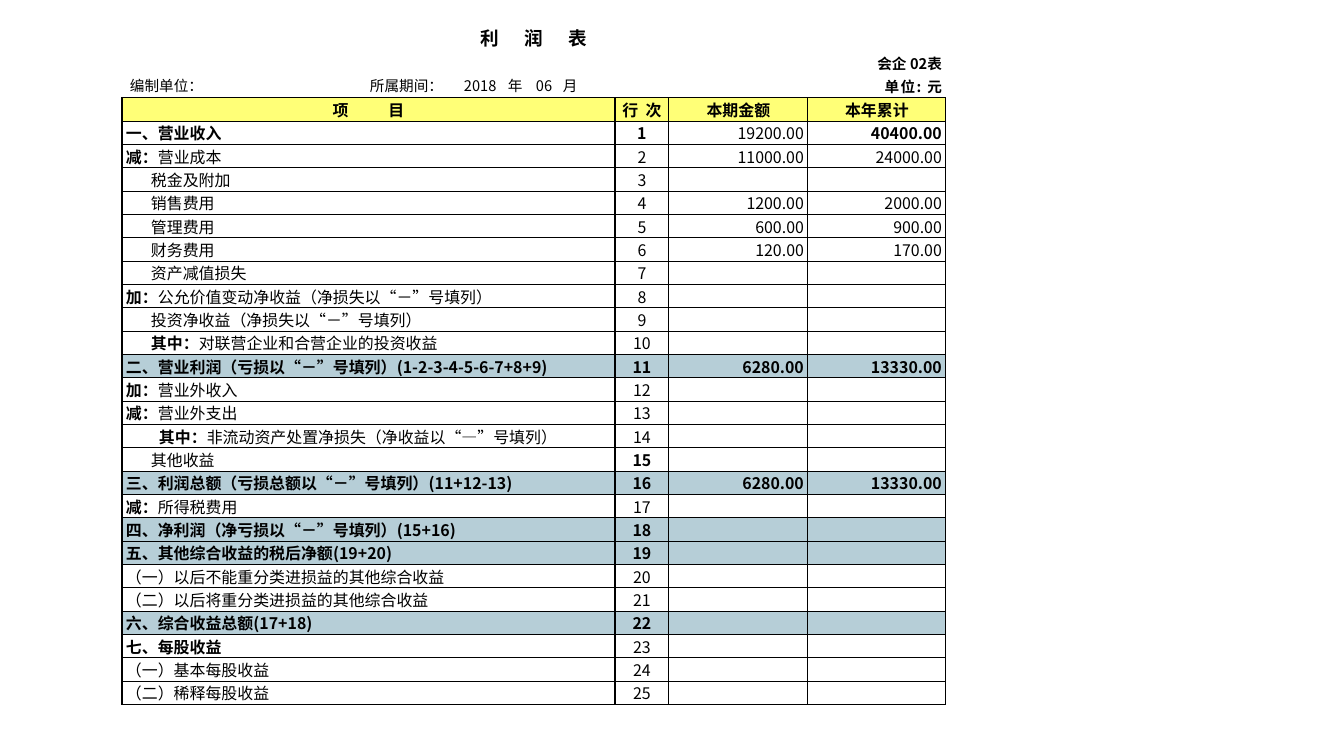
from dataclasses import dataclass

from lxml.etree import SubElement
from pptx import Presentation
from pptx.dml.color import RGBColor
from pptx.enum.text import MSO_ANCHOR as Anchor, PP_ALIGN as Align
from pptx.oxml.ns import qn
from pptx.table import Table, _Cell as Cell
from pptx.util import Emu, Pt

PX = 9565
FONT = "Noto Sans CJK SC"
BLACK = RGBColor(0x00, 0x00, 0x00)
YELLOW = RGBColor(0xFF, 0xFF, 0x77)
BLUE_GREY = RGBColor(0xB6, 0xCE, 0xD7)
NO_STYLE = "{2D5ABB26-0587-4C30-8999-92F81FD0307C}"

LEFT, TOP, HEIGHT = 122, 24, 677
COLUMNS = (413, 80, 54, 139, 138)
HEADING_ROWS = 3
HEADER_ROW = 3
PERIOD_TABS = (240, 334, 378, 406, 433)
INDENT, DEEP_INDENT = 25, 33
ALL_SIDES = ("lnL", "lnR", "lnT", "lnB")


@dataclass(frozen=True)
class Span:
    text: str
    bold: bool = False
    tracking: float = 0


@dataclass(frozen=True)
class Line:
    """One line of the statement: a bold lead, then plain text."""
    lead: str = ""
    text: str = ""
    current: str = ""
    total: str = ""
    indent: int = 0
    shaded: bool = False


LINES = (
    Line("一、营业收入", "", "19200.00", "40400.00"),
    Line("减：", "营业成本", "11000.00", "24000.00"),
    Line("", "税金及附加", indent=INDENT),
    Line("", "销售费用", "1200.00", "2000.00", INDENT),
    Line("", "管理费用", "600.00", "900.00", INDENT),
    Line("", "财务费用", "120.00", "170.00", INDENT),
    Line("", "资产减值损失", indent=INDENT),
    Line("加：", "公允价值变动净收益（净损失以“－”号填列）"),
    Line("", "投资净收益（净损失以“－”号填列）", indent=INDENT),
    Line("其中：", "对联营企业和合营企业的投资收益", indent=INDENT),
    Line("二、营业利润（亏损以“－”号填列）(1-2-3-4-5-6-7+8+9)", "",
         "6280.00", "13330.00", shaded=True),
    Line("加：", "营业外收入"),
    Line("减：", "营业外支出"),
    Line("其中：", "非流动资产处置净损失（净收益以“—”号填列）", indent=DEEP_INDENT),
    Line("", "其他收益", indent=INDENT),
    Line("三、利润总额（亏损总额以“－”号填列）(11+12-13)", "",
         "6280.00", "13330.00", shaded=True),
    Line("减：", "所得税费用"),
    Line("四、净利润（净亏损以“－”号填列）(15+16)", shaded=True),
    Line("五、其他综合收益的税后净额(19+20)", shaded=True),
    Line("", "（一）以后不能重分类进损益的其他综合收益"),
    Line("", "（二）以后将重分类进损益的其他综合收益"),
    Line("六、综合收益总额(17+18)", shaded=True),
    Line("七、每股收益"),
    Line("", "（一）基本每股收益"),
    Line("", "（二）稀释每股收益"),
)
BOLD_NUMBERS = {1, 15}
BOLD_TOTALS = {1}


def spaced(text: str, tracking: float) -> tuple[Span, Span]:
    """Bold text with wide gaps between letters and none after the last."""
    return Span(text[:-1], True, tracking), Span(text[-1], True)


def write(cell: Cell, *spans: Span, align: Align = Align.LEFT,
          size: int = 12, indent: int = 0) -> None:
    para = cell.text_frame.paragraphs[0]
    para.alignment = align
    if indent:
        para._p.get_or_add_pPr().set("marL", str(indent * PX))
    for span in spans:
        if not span.text:
            continue
        run = para.add_run()
        run.text = span.text
        formats = {"size": Pt(size), "bold": span.bold, "name": FONT}
        for name, value in formats.items():
            setattr(run.font, name, value)
        run.font.color.rgb = BLACK
        properties = run._r.get_or_add_rPr()
        SubElement(properties, qn("a:ea"), typeface=FONT)
        if span.tracking:
            properties.set("spc", str(round(span.tracking * 100)))


def draw_borders(cell: Cell, sides: tuple[str, ...]) -> None:
    properties = cell._tc.get_or_add_tcPr()
    for side in sides:
        border = SubElement(properties, qn(f"a:{side}"), w=str(Pt(1)))
        fill = SubElement(border, qn("a:solidFill"))
        SubElement(fill, qn("a:srgbClr"), val=str(BLACK))


def prepare(cell: Cell, row: int) -> None:
    """Set margins, borders and fill, and keep an empty cell low."""
    formats = {"margin_left": Emu(4 * PX), "margin_right": Emu(4 * PX),
               "margin_top": 0, "margin_bottom": 0,
               "vertical_anchor": Anchor.MIDDLE}
    for name, value in formats.items():
        setattr(cell, name, value)
    if row >= HEADER_ROW:
        draw_borders(cell, ALL_SIDES)
    elif row == HEADER_ROW - 1:
        draw_borders(cell, ("lnB",))
    shaded = row > HEADER_ROW and LINES[row - HEADER_ROW - 1].shaded
    if row == HEADER_ROW or shaded:
        cell.fill.solid()
        cell.fill.fore_color.rgb = YELLOW if row == HEADER_ROW else BLUE_GREY
    else:
        cell.fill.background()
    SubElement(cell.text_frame.paragraphs[0]._p, qn("a:endParaRPr"), sz="1100")


def merge(table: Table, row: int, first: int, last: int) -> None:
    table.cell(row, first).merge(table.cell(row, last))


def write_heading(table: Table) -> None:
    merge(table, 0, 0, 4)
    merge(table, 1, 1, 2)
    merge(table, 2, 0, 3)
    write(table.cell(0, 0), *spaced("利 润 表", 8), align=Align.CENTER, size=14)
    write(table.cell(1, 4), Span("会企 02表", True), align=Align.RIGHT, size=11)
    write(table.cell(2, 4), *spaced("单位: 元", 1), align=Align.RIGHT, size=11)

    period = table.cell(2, 0)
    period.margin_left = Emu(8 * PX)
    period.vertical_anchor = Anchor.TOP
    para = period.text_frame.paragraphs[0]
    tabs = SubElement(para._p.get_or_add_pPr(), qn("a:tabLst"))
    for position in PERIOD_TABS:
        SubElement(tabs, qn("a:tab"), pos=str(position * PX), algn="l")
    write(period, Span("编制单位：\t所属期间：\t2018\t年\t06\t月"), size=11)


def write_header(table: Table) -> None:
    merge(table, HEADER_ROW, 0, 1)
    headers = {0: spaced("项 目", 13.7), 2: spaced("行 次", 1.4),
               3: (Span("本期金额", True),), 4: (Span("本年累计", True),)}
    for column, spans in headers.items():
        write(table.cell(HEADER_ROW, column), *spans, align=Align.CENTER)


def write_line(table: Table, number: int, line: Line) -> None:
    row = HEADER_ROW + number
    merge(table, row, 0, 1)
    write(table.cell(row, 0), Span(line.lead, True), Span(line.text),
          indent=line.indent)
    write(table.cell(row, 2),
          Span(str(number), line.shaded or number in BOLD_NUMBERS),
          align=Align.CENTER)
    write(table.cell(row, 3), Span(line.current, line.shaded),
          align=Align.RIGHT)
    write(table.cell(row, 4),
          Span(line.total, line.shaded or number in BOLD_TOTALS),
          align=Align.RIGHT)


def main() -> None:
    deck = Presentation()
    deck.slide_width, deck.slide_height = Emu(1344 * PX), Emu(756 * PX)
    page = deck.slides.add_slide(deck.slide_layouts[6])
    row_count = HEADING_ROWS + 1 + len(LINES)
    frame = page.shapes.add_table(
        row_count, len(COLUMNS), Emu(LEFT * PX), Emu(TOP * PX),
        Emu(sum(COLUMNS) * PX), Emu(HEIGHT * PX))
    table = frame.table
    table.first_row = table.horz_banding = False
    table._tbl.tblPr.find(qn("a:tableStyleId")).text = NO_STYLE
    for column, width in zip(table.columns, COLUMNS):
        column.width = Emu(width * PX)
    for index, row in enumerate(table.rows):
        row.height = Emu(HEIGHT * PX // row_count)
        for cell in row.cells:
            prepare(cell, index)
    write_heading(table)
    write_header(table)
    for number, line in enumerate(LINES, 1):
        write_line(table, number, line)
    deck.save("out.pptx")


if __name__ == "__main__":
    main()
